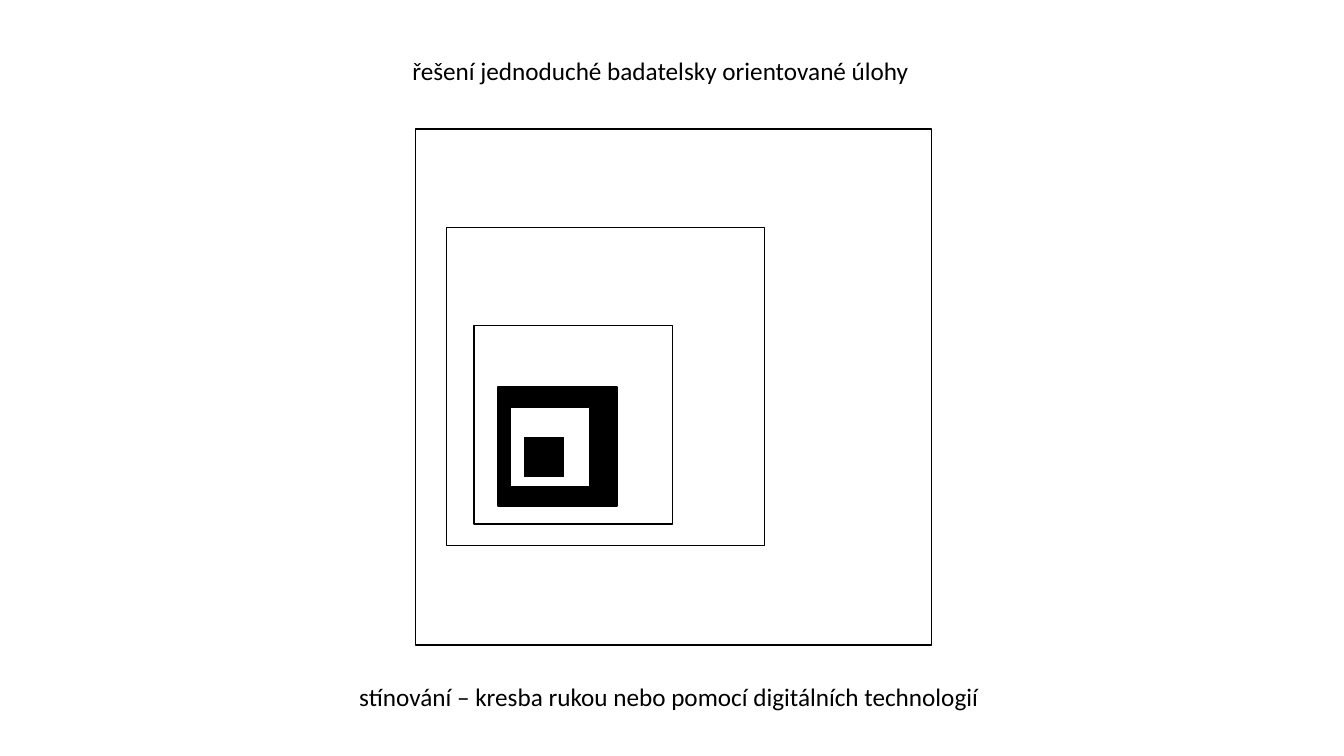
import pptx
import pptx.dml.color
import pptx.enum.shapes
import pptx.enum.text
import pptx.util

EMU_PER_PX = 9144  # 100 px to the inch
COLORS = {"ink": "000000", "paper": "FFFFFF"}
UNIT = 39.37  # one centimetre in px

# side in units, left, top, fill; from back to front
SQUARES = [
    (3, 494, 384, "ink"),
    (5, 470, 323, None),
    (8, 443, 226, None),
    (13, 412, 128, None),
    (2, 506, 404, "paper"),
    (1, 520, 434, "ink"),
]


def px(length):
    return pptx.util.Emu(length * EMU_PER_PX)


def rgb(color):
    return pptx.dml.color.RGBColor.from_string(COLORS[color])


def write(frame, text, size=18, font="Calibri", color="ink", align="LEFT", wrap=True):
    frame.word_wrap = wrap
    frame.auto_size = pptx.enum.text.MSO_AUTO_SIZE.SHAPE_TO_FIT_TEXT
    frame.vertical_anchor = pptx.enum.text.MSO_ANCHOR.TOP
    paragraph = frame.paragraphs[0]
    paragraph.alignment = getattr(pptx.enum.text.PP_ALIGN, align)
    run = paragraph.add_run()
    run.text = text
    run.font.size = pptx.util.Pt(size)
    run.font.name = font
    run.font.color.rgb = rgb(color)


class SlideBuilder:
    def __init__(self, slide, line_color="ink", line_width=1):
        self.slide = slide
        self.line_color = line_color
        self.line_width = line_width

    def title(self, text, left, top, width, height, **style):
        heading = self.slide.shapes.title
        heading.left, heading.top = px(left), px(top)
        heading.width, heading.height = px(width), px(height)
        write(heading.text_frame, text, **style)

    def caption(self, text, left, top, width, height, **style):
        caption = self.slide.shapes.add_textbox(px(left), px(top), px(width), px(height))
        write(caption.text_frame, text, **style)

    def square(self, group, side, left, top, fill):
        square = group.shapes.add_shape(
            pptx.enum.shapes.MSO_SHAPE.RECTANGLE, px(left), px(top), px(side), px(side))
        square.shadow.inherit = False
        if fill:
            square.fill.solid()
            square.fill.fore_color.rgb = rgb(fill)
        else:
            square.fill.background()
        square.line.color.rgb = rgb(self.line_color)
        square.line.width = pptx.util.Pt(self.line_width)

    def nested_squares(self, squares):
        group = self.slide.shapes.add_group_shape()
        for units, left, top, fill in squares:
            self.square(group, round(units * UNIT), left, top, fill)


def main():
    presentation = pptx.Presentation()
    presentation.slide_width, presentation.slide_height = px(1333), px(750)
    title_only = presentation.slide_layouts[5]
    builder = SlideBuilder(presentation.slides.add_slide(title_only))
    builder.nested_squares(SQUARES)
    builder.title("řešení jednoduché badatelsky orientované úlohy",
                  399, 50, 523, 40, wrap=False)
    builder.caption("stínování – kresba rukou nebo pomocí digitálních technologií",
                    202, 671, 923, 40, align="CENTER")
    presentation.save("out.pptx")


if __name__ == "__main__":
    main()
